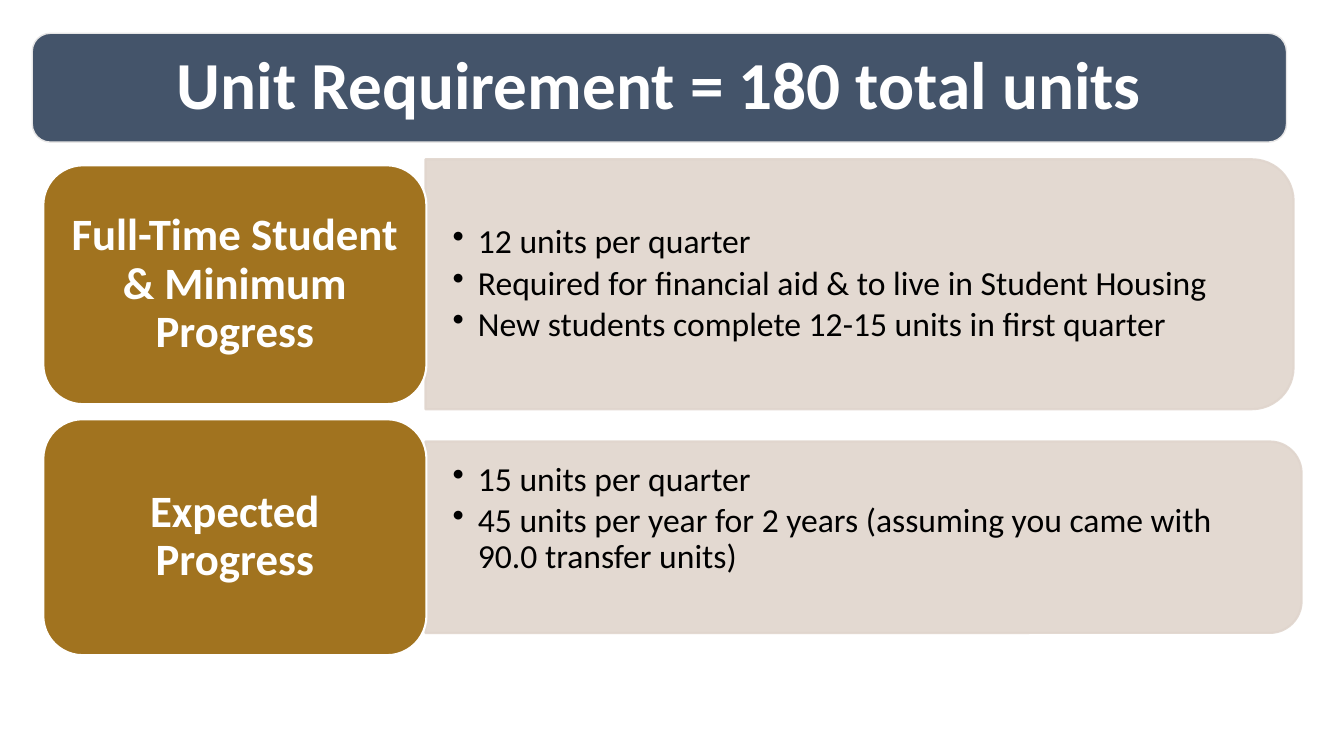
from lxml import etree
from pptx import Presentation
from pptx.dml.color import RGBColor
from pptx.enum.shapes import MSO_SHAPE
from pptx.enum.text import MSO_ANCHOR, PP_ALIGN
from pptx.oxml.ns import qn
from pptx.util import Inches, Pt

ROUNDED = MSO_SHAPE.ROUNDED_RECTANGLE
ROUNDED_TOP = MSO_SHAPE.ROUND_2_SAME_RECTANGLE
MIDDLE = MSO_ANCHOR.MIDDLE
LEFT, CENTER = PP_ALIGN.LEFT, PP_ALIGN.CENTER

FONT = "Calibri"
COLORS = {
    "title": "44546A",
    "title_line": "E7E6E6",
    "label": "A1731F",
    "panel": "E0D5CD",
    "white": "FFFFFF",
    "black": "000000",
}
PANEL_OPACITY = 90
CORNER_INSET = 0.049
SECTIONS = [
    {
        "label": "Full-Time Student & Minimum Progress",
        "label_box": (0.43, 1.64, 3.8, 2.37),
        "panel_box": (4.22, 1.58, 8.61, 2.48),
        "points": [
            "12 units per quarter",
            "Required for financial aid & to live in Student Housing",
            "New students complete 12-15 units in first quarter",
        ],
        "bottom_inset": 0.14,
    },
    {
        "label": "Expected Progress",
        "label_box": (0.43, 4.16, 3.8, 2.34),
        "panel_box": (4.22, 4.38, 8.69, 1.9),
        "points": [
            "15 units per quarter",
            "45 units per year for 2 years (assuming you came with 90.0 transfer units)",
        ],
        "bottom_inset": 0.5,
    },
]


def color(name):
    """Return the named colour of the palette."""
    return RGBColor.from_string(COLORS[name])


def add_box(slide, kind, box, fill, line, line_width):
    """Add a filled and outlined preset shape without shadow."""
    shape = slide.shapes.add_shape(kind, *map(Inches, box))
    shape.shadow.inherit = False
    shape.fill.solid()
    shape.fill.fore_color.rgb = color(fill)
    shape.line.color.rgb = color(line)
    shape.line.width = Pt(line_width)
    return shape


def set_opacity(shape, percent):
    """Make the fill and outline of a shape partly transparent."""
    for solid_color in shape.element.spPr.iter(qn("a:srgbClr")):
        alpha = etree.SubElement(solid_color, qn("a:alpha"))
        alpha.set("val", str(percent * 1000))


def add_bullet(paragraph, indent):
    """Give a paragraph a round bullet with a hanging indent."""
    properties = paragraph._p.get_or_add_pPr()
    properties.set("marL", str(Inches(indent)))
    properties.set("indent", str(-Inches(indent)))
    etree.SubElement(properties, qn("a:buChar")).set("char", "•")


def write_text(shape, lines, *, size, font_color, bold=False, align=CENTER,
               insets=(0.13, 0.07, 0.13, 0.07), space_after=0, bullets=False):
    """Write one formatted paragraph per line into a shape."""
    frame = shape.text_frame
    frame.word_wrap = True
    frame.vertical_anchor = MIDDLE
    (frame.margin_left, frame.margin_top,
     frame.margin_right, frame.margin_bottom) = map(Inches, insets)
    for index, line in enumerate(lines):
        paragraph = frame.add_paragraph() if index else frame.paragraphs[0]
        paragraph.alignment = align
        paragraph.line_spacing = 0.9
        paragraph.space_after = Pt(space_after)
        if bullets:
            add_bullet(paragraph, 0.25)
        run = paragraph.add_run()
        run.text = line
        run.font.name = FONT
        run.font.size = Pt(size)
        run.font.bold = bold
        run.font.color.rgb = color(font_color)


def add_title(slide, box, text):
    """Add the title banner."""
    banner = add_box(slide, ROUNDED, box, "title", "title_line", 1)
    write_text(banner, [text], size=48, font_color="white", bold=True,
               insets=(0.2, 0.2, 0.2, 0.2))


def add_panel(slide, box, points, bottom_inset):
    """Add a panel rounded on its right side, with its bullet points."""
    left, top, width, height = box
    upright_box = (left + (width - height) / 2, top + (height - width) / 2, height, width)
    panel = add_box(slide, ROUNDED_TOP, upright_box, "panel", "panel", 1.5)
    panel.rotation = 90
    set_opacity(panel, PANEL_OPACITY)
    inset = CORNER_INSET * height
    text_box = (left, top + inset, width - inset, height - 2 * inset)
    body = slide.shapes.add_textbox(*map(Inches, text_box))
    write_text(body, points, size=24, font_color="black", align=LEFT,
               insets=(0.27, 0.14, 0.27, bottom_inset), space_after=3.6, bullets=True)


def add_label(slide, box, text):
    """Add the label block of a section."""
    label = add_box(slide, ROUNDED, box, "label", "white", 1.5)
    write_text(label, [text], size=32, font_color="white", bold=True)


def main():
    """Build and save the unit requirement slide."""
    presentation = Presentation()
    presentation.slide_width = Inches(13.33)
    presentation.slide_height = Inches(7.5)
    slide = presentation.slides.add_slide(presentation.slide_layouts[6])
    add_title(slide, (0.32, 0.33, 12.44, 1.08), "Unit Requirement = 180 total units")
    for section in SECTIONS:
        add_panel(slide, section["panel_box"], section["points"], section["bottom_inset"])
        add_label(slide, section["label_box"], section["label"])
    presentation.save("out.pptx")


if __name__ == "__main__":
    main()
